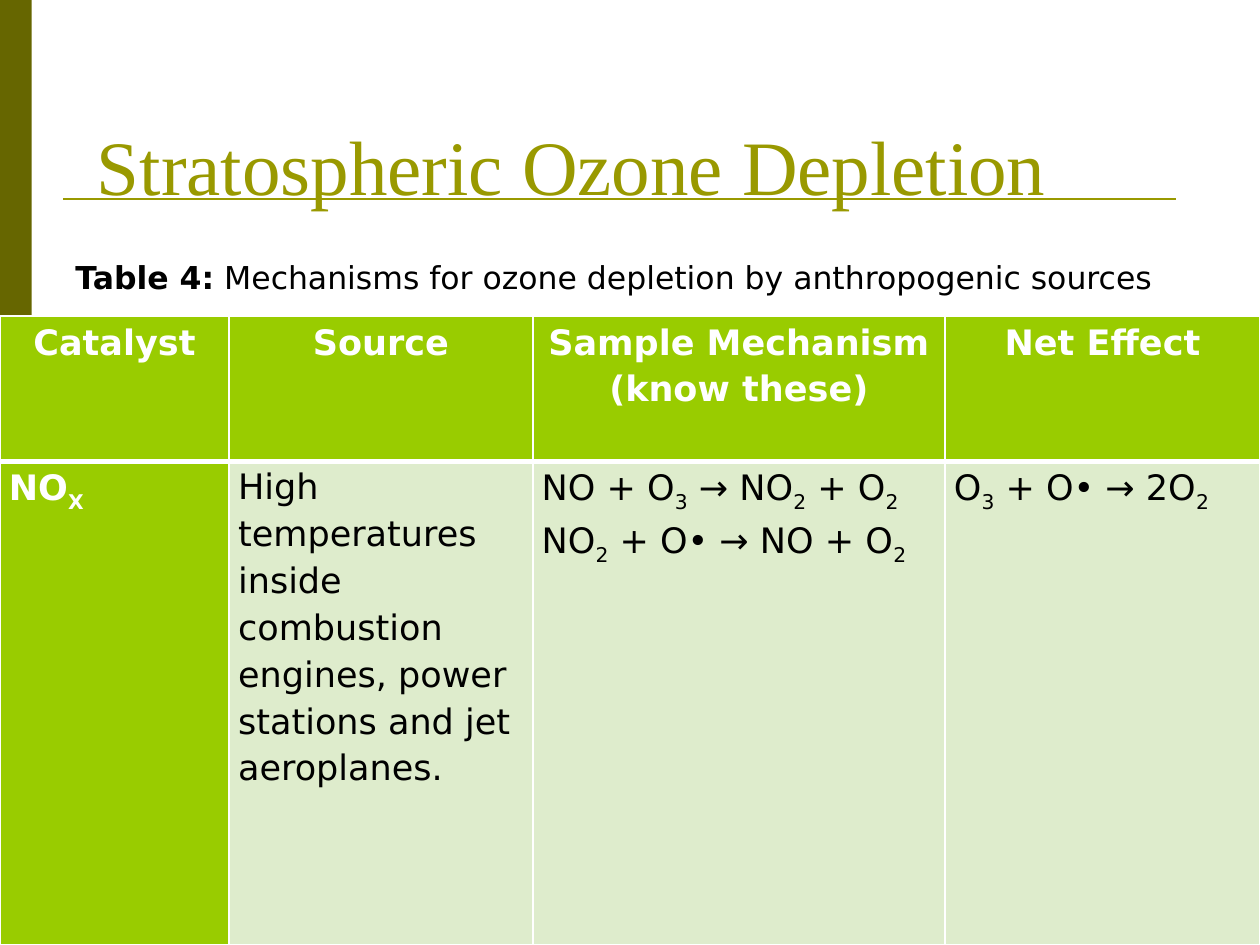
from dataclasses import dataclass

from lxml import etree
from pptx import Presentation
from pptx.dml.color import RGBColor
from pptx.enum.shapes import MSO_CONNECTOR, MSO_SHAPE
from pptx.enum.text import MSO_ANCHOR, MSO_AUTO_SIZE, PP_ALIGN
from pptx.oxml.ns import qn
from pptx.util import Cm, Pt

STRAIGHT = MSO_CONNECTOR.STRAIGHT
RECTANGLE = MSO_SHAPE.RECTANGLE
BOTTOM, TOP = MSO_ANCHOR.BOTTOM, MSO_ANCHOR.TOP
LEFT, CENTER = PP_ALIGN.LEFT, PP_ALIGN.CENTER
NO_AUTOFIT = MSO_AUTO_SIZE.NONE
TITLE_ONLY = 5


@dataclass(frozen=True)
class Theme:
    title_font: str = "Times New Roman"
    body_font: str = "DejaVu Sans"
    title_size: int = 44
    caption_size: int = 18
    table_size: int = 20
    olive: str = "999900"
    dark_olive: str = "666600"
    green: str = "99CC00"
    pale_green: str = "DEECCC"
    black: str = "000000"
    white: str = "FFFFFF"


THEME = Theme()

COLUMN_WIDTHS = (4.62, 6.12, 8.31, 6.35)
ROW_HEIGHTS = (2.92, 9.75)
# An underscore sets the next character as a subscript
ROWS = (
    ("Catalyst", "Source", "Sample Mechanism (know these)", "Net Effect"),
    (
        "NO_X",
        "High temperatures inside combustion engines, power stations and jet aeroplanes.",
        "NO + O_3 → NO_2 + O_2\nNO_2 + O• → NO + O_2",
        "O_3 + O• → 2O_2",
    ),
)


def style_font(font, name, size, color, bold=False):
    font.name = name
    font.size = Pt(size)
    font.bold = bold
    font.color.rgb = RGBColor.from_string(color)


def add_title(page, text):
    title = page.shapes.title
    title.left, title.top, title.width, title.height = Cm(1.7), Cm(1.19), Cm(22.86), Cm(3.18)
    frame = title.text_frame
    frame.text = text
    frame.auto_size = NO_AUTOFIT
    frame.vertical_anchor = BOTTOM
    para = frame.paragraphs[0]
    para.alignment = LEFT
    style_font(para.runs[0].font, THEME.title_font, THEME.title_size, THEME.olive)


def add_side_bar(page):
    bar = page.shapes.add_shape(RECTANGLE, 0, 0, Cm(0.64), Cm(6.35))
    bar.shadow.inherit = False
    bar.fill.solid()
    bar.fill.fore_color.rgb = RGBColor.from_string(THEME.dark_olive)
    bar.line.fill.background()


def add_title_rule(page):
    rule = page.shapes.add_connector(STRAIGHT, Cm(1.27), Cm(4.01), Cm(23.7), Cm(4.01))
    rule.line.color.rgb = RGBColor.from_string(THEME.olive)
    rule.line.width = Pt(1.5)
    etree.SubElement(rule._element.spPr, qn("a:effectLst"))


def add_caption(page, label, text):
    box = page.shapes.add_textbox(Cm(1.27), Cm(5.08), Cm(22.86), Cm(1.27))
    box.text_frame.word_wrap = True
    para = box.text_frame.paragraphs[0]
    for words, bold in ((label, True), (text, False)):
        span = para.add_run()
        span.text = words
        style_font(span.font, THEME.body_font, THEME.caption_size, THEME.black, bold)


def add_formula(para, text, color, bold):
    plain, *rest = text.split("_")
    pieces = [(plain, False)]
    for piece in rest:
        pieces += [(piece[0], True), (piece[1:], False)]
    for words, subscript in pieces:
        if words:
            span = para.add_run()
            span.text = words
            style_font(span.font, THEME.body_font, THEME.table_size, color, bold)
            if subscript:
                span._r.get_or_add_rPr().set("baseline", "-25000")


def set_borders(cell, top, bottom):
    properties = cell._tc.get_or_add_tcPr()
    for side, width in (("L", 1), ("R", 1), ("T", top), ("B", bottom)):
        line = etree.SubElement(properties, qn(f"a:ln{side}"), w=str(Pt(width)))
        fill = etree.SubElement(line, qn("a:solidFill"))
        etree.SubElement(fill, qn("a:srgbClr"), val=THEME.white)


def fill_cell(cell, text, is_header, is_strong):
    cell.margin_left = cell.margin_right = Cm(0.18)
    cell.margin_top = cell.margin_bottom = 0
    cell.vertical_anchor = TOP
    set_borders(cell, top=1 if is_header else 3, bottom=3 if is_header else 1)
    cell.fill.solid()
    cell.fill.fore_color.rgb = RGBColor.from_string(
        THEME.green if is_strong else THEME.pale_green)
    frame = cell.text_frame
    for index, line in enumerate(text.split("\n")):
        para = frame.add_paragraph() if index else frame.paragraphs[0]
        para.alignment = CENTER if is_header else LEFT
        para.line_spacing = 1.15
        add_formula(para, line, THEME.white if is_strong else THEME.black, is_strong)


def add_mechanism_table(page):
    table = page.shapes.add_table(
        len(ROWS), len(COLUMN_WIDTHS), 0, Cm(6.38),
        Cm(sum(COLUMN_WIDTHS)), Cm(sum(ROW_HEIGHTS))).table
    table.horz_banding = False
    for column, width in zip(table.columns, COLUMN_WIDTHS):
        column.width = Cm(width)
    for row, height in zip(table.rows, ROW_HEIGHTS):
        row.height = Cm(height)
    for row_index, texts in enumerate(ROWS):
        for column_index, text in enumerate(texts):
            is_header = row_index == 0
            fill_cell(table.cell(row_index, column_index), text,
                      is_header, is_header or column_index == 0)


def main():
    deck = Presentation()
    deck.slide_width, deck.slide_height = Cm(25.4), Cm(19.05)
    page = deck.slides.add_slide(deck.slide_layouts[TITLE_ONLY])

    # Title and page decoration
    add_side_bar(page)
    add_title_rule(page)
    add_title(page, "Stratospheric Ozone Depletion")

    # Captioned table
    add_caption(page, "Table 4:", " Mechanisms for ozone depletion by anthropogenic sources")
    add_mechanism_table(page)

    deck.save("out.pptx")


if __name__ == "__main__":
    main()
